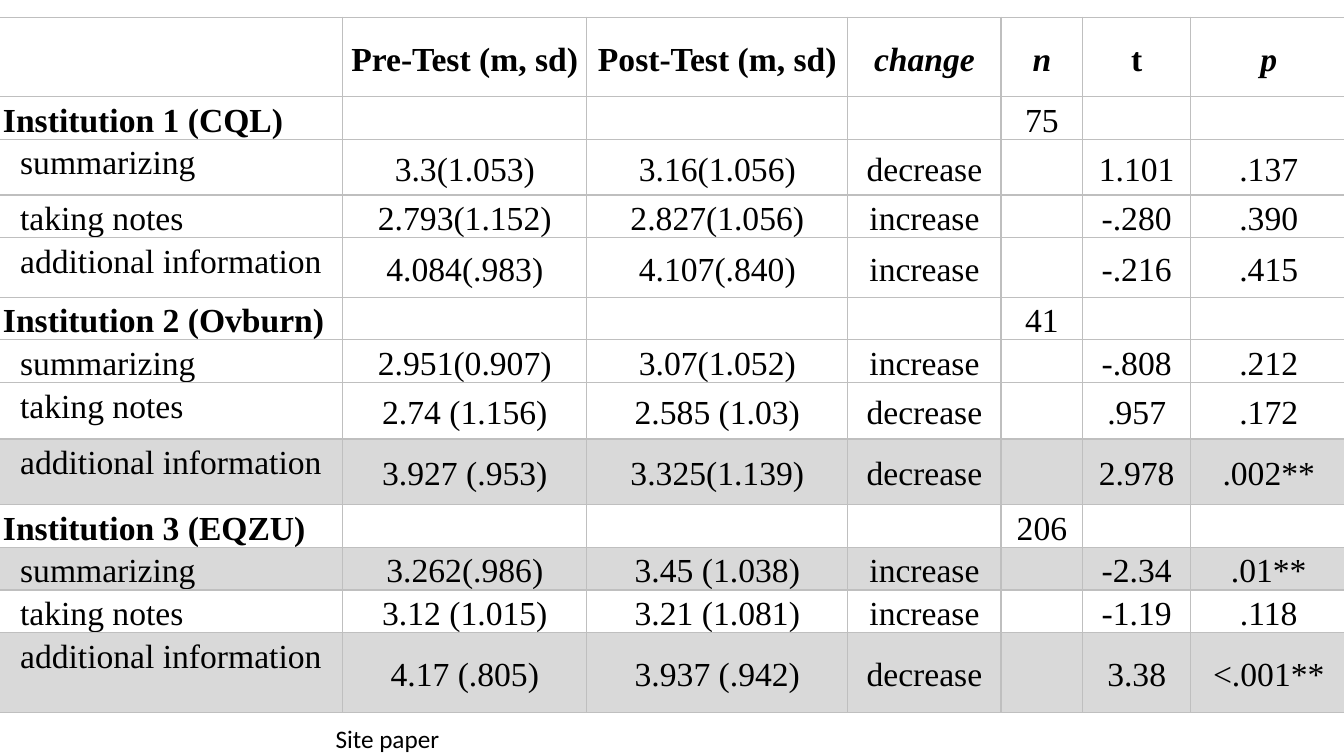
from dataclasses import dataclass

from lxml.etree import SubElement
from pptx import Presentation
from pptx.dml.color import RGBColor
from pptx.enum.text import MSO_ANCHOR as Anchor, PP_ALIGN as Align
from pptx.oxml.ns import qn
from pptx.util import Inches, Pt

BLACK = RGBColor(0x00, 0x00, 0x00)
SHADE = RGBColor(0xD9, 0xD9, 0xD9)
RULE = RGBColor(0xBF, 0xBF, 0xBF)
TABLE_FONT = "Times New Roman"
CELL_MARGIN = 0.07
ITEM_INDENT = 0.17
COLUMN_WIDTHS = (3.44, 2.42, 2.59, 1.52, 0.81, 1.07, 1.55)
HEADINGS = ("", "Pre-Test (m, sd)", "Post-Test (m, sd)", "change", "n", "t", "p")
ITALIC_HEADINGS = ("change", "n", "p")


@dataclass
class Measure:
    label: str
    height: float
    pre: str
    post: str
    change: str
    t: str
    p: str

    @property
    def significant(self) -> bool:
        return self.p.endswith("**")


@dataclass
class Institution:
    name: str
    n: str
    measures: list[Measure]


INSTITUTIONS = [
    Institution("Institution 1 (CQL)", "75", [
        Measure("summarizing", 0.55, "3.3(1.053)", "3.16(1.056)", "decrease", "1.101", ".137"),
        Measure("taking notes", 0.41, "2.793(1.152)", "2.827(1.056)", "increase", "-.280", ".390"),
        Measure("additional information", 0.59, "4.084(.983)", "4.107(.840)", "increase", "-.216", ".415"),
    ]),
    Institution("Institution 2 (Ovburn)", "41", [
        Measure("summarizing", 0.41, "2.951(0.907)", "3.07(1.052)", "increase", "-.808", ".212"),
        Measure("taking notes", 0.56, "2.74 (1.156)", "2.585 (1.03)", "decrease", ".957", ".172"),
        Measure("additional information", 0.65, "3.927 (.953)", "3.325(1.139)", "decrease", "2.978", ".002**"),
    ]),
    Institution("Institution 3 (EQZU)", "206", [
        Measure("summarizing", 0.41, "3.262(.986)", "3.45 (1.038)", "increase", "-2.34", ".01**"),
        Measure("taking notes", 0.41, "3.12 (1.015)", "3.21 (1.081)", "increase", "-1.19", ".118"),
        Measure("additional information", 0.79, "4.17 (.805)", "3.937 (.942)", "decrease", "3.38", "<.001**"),
    ]),
]


@dataclass
class Row:
    texts: tuple[str, ...]
    height: float
    heading: bool = False
    bold_label: bool = False
    indent: float = 0
    shaded: bool = False


def list_rows() -> list[Row]:
    rows = [Row(HEADINGS, 0.79, heading=True)]
    for group in INSTITUTIONS:
        rows.append(Row((group.name, "", "", "", group.n, "", ""), 0.38, bold_label=True))
        for item in group.measures:
            texts = (item.label, item.pre, item.post, item.change, "", item.t, item.p)
            rows.append(Row(texts, item.height, indent=ITEM_INDENT, shaded=item.significant))
    return rows


def add_borders(cell) -> None:
    properties = cell._tc.get_or_add_tcPr()
    for side in ("a:lnL", "a:lnR", "a:lnT", "a:lnB"):
        line = SubElement(properties, qn(side), w=str(Pt(1)))
        fill = SubElement(line, qn("a:solidFill"))
        SubElement(fill, qn("a:srgbClr"), val=str(RULE))


def fill_cell(cell, row: Row, column: int) -> None:
    is_label = column == 0
    add_borders(cell)
    if row.shaded:
        cell.fill.solid()
        cell.fill.fore_color.rgb = SHADE
    else:
        cell.fill.background()
    cell.margin_left = Inches(CELL_MARGIN + (row.indent if is_label else 0))
    cell.margin_right = Inches(CELL_MARGIN)
    cell.margin_top = cell.margin_bottom = 0
    cell.vertical_anchor = Anchor.TOP if is_label else Anchor.MIDDLE

    text = row.texts[column]
    cell.text = text
    para = cell.text_frame.paragraphs[0]
    para.alignment = Align.JUSTIFY if is_label else Align.CENTER
    para.line_spacing = 1.15
    font = para.font
    font.name, font.size, font.color.rgb = TABLE_FONT, Pt(24), BLACK
    font.bold = row.heading or (is_label and row.bold_label)
    font.italic = row.heading and text in ITALIC_HEADINGS


def add_results(page) -> None:
    rows = list_rows()
    frame = page.shapes.add_table(
        len(rows), len(COLUMN_WIDTHS), Inches(-0.04), Inches(0.17),
        Inches(sum(COLUMN_WIDTHS)), Inches(sum(row.height for row in rows)))
    table = frame.table
    table.first_row = table.horz_banding = False
    for column, width in zip(table.columns, COLUMN_WIDTHS):
        column.width = Inches(width)
    for index, row in enumerate(rows):
        table.rows[index].height = Inches(row.height)
        for column in range(len(COLUMN_WIDTHS)):
            fill_cell(table.cell(index, column), row, column)


def add_caption(page) -> None:
    box = page.shapes.add_textbox(Inches(3.23), Inches(7.13), Inches(3.65), Inches(0.4))
    box.text_frame.word_wrap = True
    para = box.text_frame.paragraphs[0]
    para.text = "Site paper"
    para.font.name, para.font.size, para.font.color.rgb = "Calibri", Pt(18), BLACK


def main() -> None:
    deck = Presentation()
    deck.slide_width, deck.slide_height = Inches(13.33), Inches(7.5)
    page = deck.slides.add_slide(deck.slide_layouts[6])
    # Test results by institution
    add_results(page)
    # Caption under the table
    add_caption(page)
    deck.save("out.pptx")


if __name__ == "__main__":
    main()
